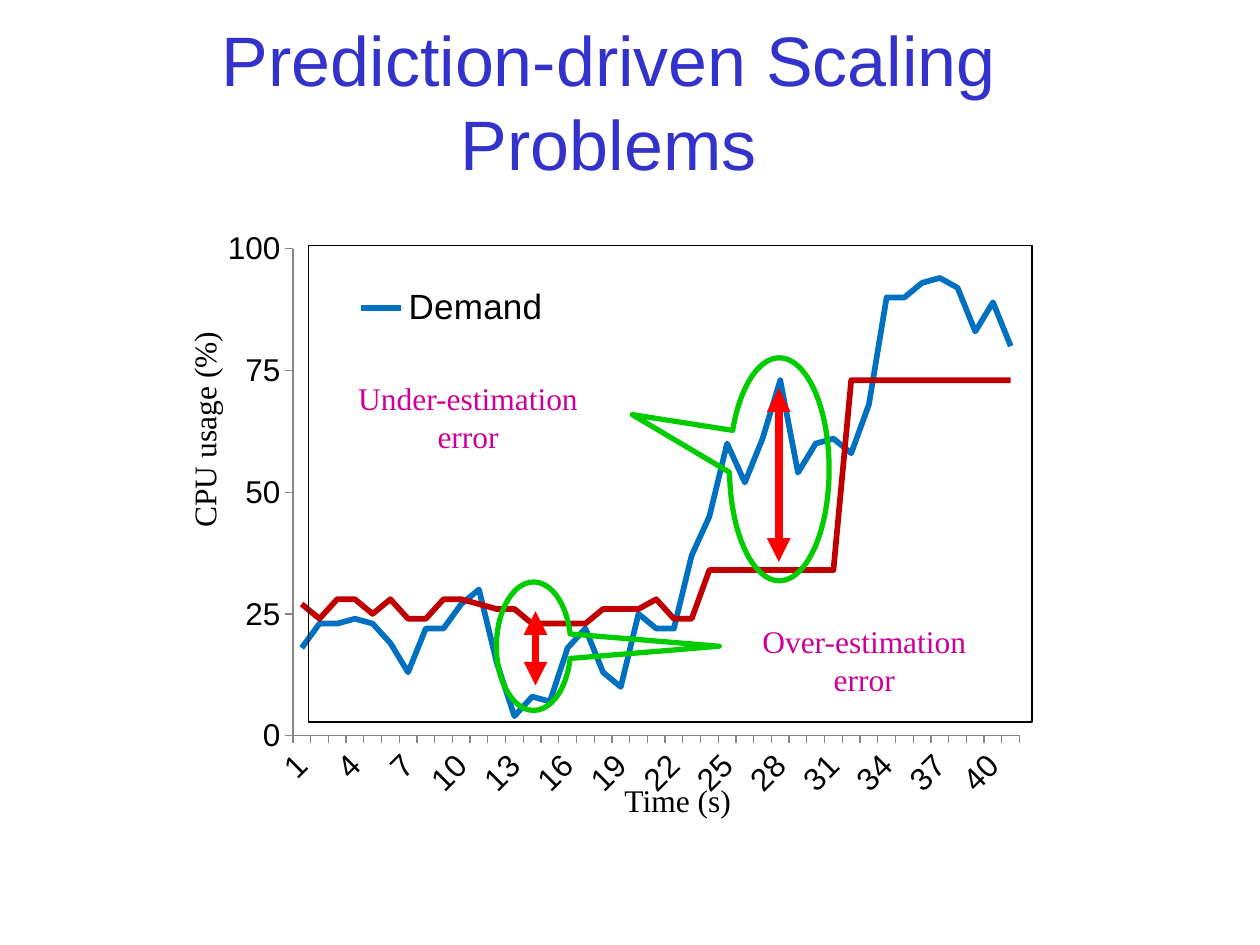
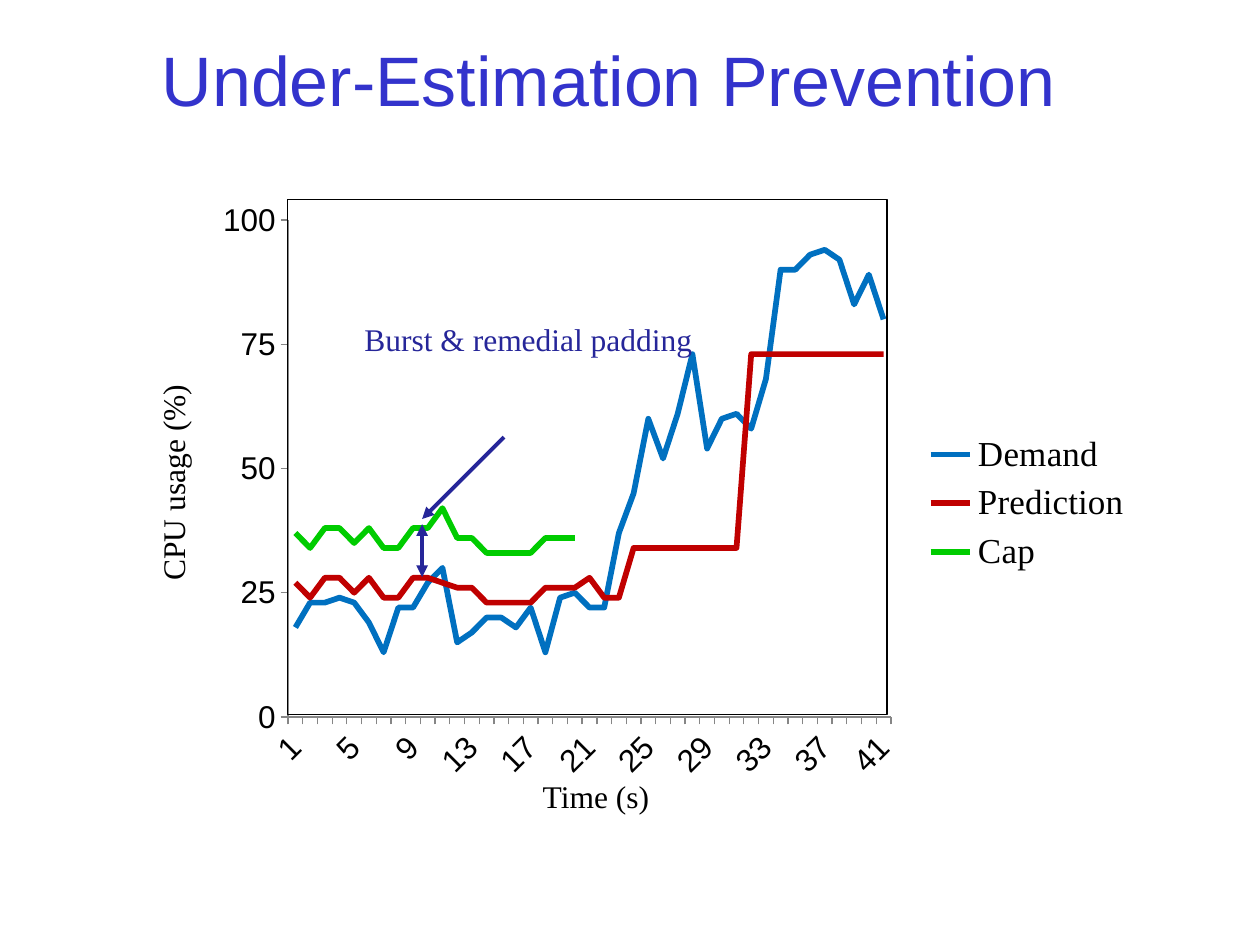
from dataclasses import dataclass

from lxml.etree import SubElement
from pptx import Presentation
from pptx.chart.data import CategoryChartData
from pptx.dml.color import RGBColor as RGB
from pptx.enum.chart import XL_CHART_TYPE as CT, XL_LEGEND_POSITION as LP, XL_TICK_MARK as TM
from pptx.enum.shapes import MSO_CONNECTOR as MC, MSO_SHAPE as MS
from pptx.enum.text import MSO_ANCHOR as MA, PP_ALIGN as PA
from pptx.oxml.ns import qn
from pptx.util import Pt


@dataclass(frozen=True)
class Theme:
    sans: str = "Arial"
    serif: str = "Times New Roman"
    title_size: int = 40
    legend_size: int = 20
    label_size: int = 18
    title: RGB = RGB.from_string("3333CC")
    ink: RGB = RGB.from_string("000000")
    axis: RGB = RGB.from_string("868686")
    demand: RGB = RGB.from_string("0070C0")
    prediction: RGB = RGB.from_string("C00000")
    cap: RGB = RGB.from_string("00CC00")
    error: RGB = RGB.from_string("CC0099")
    gap: RGB = RGB.from_string("FF0000")
    padding: RGB = RGB.from_string("262699")


T = Theme()


def text(s, box, lines, size=T.label_size, font=T.serif, color=T.ink,
         anchor=MA.TOP, vertical=False):
    tf = s.shapes.add_textbox(*map(Pt, box)).text_frame
    tf.word_wrap = True
    tf.vertical_anchor = anchor
    if vertical:
        tf._txBody.bodyPr.set("vert", "vert270")
    for i, line in enumerate(lines):
        p = tf.add_paragraph() if i else tf.paragraphs[0]
        p.alignment = PA.CENTER
        r = p.add_run()
        r.text = line
        r.font.size = Pt(size)
        r.font.name = font
        r.font.color.rgb = color


def place(parent, index, x, y, w, h, inner=False):
    for old in parent.findall(qn("c:layout")):
        parent.remove(old)
    layout = SubElement(parent, qn("c:layout"))
    manual = SubElement(layout, qn("c:manualLayout"))
    if inner:
        SubElement(manual, qn("c:layoutTarget")).set("val", "inner")
    for tag, val in (("xMode", "edge"), ("yMode", "edge"),
                     ("x", x), ("y", y), ("w", w), ("h", h)):
        SubElement(manual, qn("c:" + tag)).set("val", str(val))
    parent.insert(index, layout)


rise = [18, 23, 23, 24, 23, 19, 13, 22, 22, 27, 30, 15]
surge = [22, 22, 37, 45, 60, 52, 61, 73, 54, 60, 61, 58, 68, 90, 90, 93, 94, 92, 83, 89, 80]
prediction = ([27, 24, 28, 28, 25, 28, 24, 24, 28, 28, 27, 26, 26] + [23] * 4
              + [26] * 3 + [28, 24, 24] + [34] * 8 + [73] * 10)
cap = [v + 10 for v in prediction[:20]]
cap[10] = 42
cap += [None] * 21

slides = [
    dict(
        title="Prediction-driven Scaling Problems", title_top=12.2,
        chart=(121.7, 125.3, 470.9, 337.7), plot=(0.097, 0.05, 0.882, 0.824),
        legend=(0.13, 0.08, 0.32, 0.14), overlay=True, hidden=[1],
        legend_font=T.sans, skip=3,
        series=[("Demand", rise + [4, 8, 7, 18, 22, 13, 10, 25] + surge, T.demand),
                ("Prediction", prediction, T.prediction)],
        time=(339.8, 442.8, 95, 39.6), usage=(102.2, 159.8, 43.2, 171.4),
        notes=[((175.7, 213.1, 183.6, 65.5), ["Under-estimation", "error"], T.error),
               ((408.2, 352.1, 171.4, 65.5), ["Over-estimation", "error"], T.error)],
        arrows=[(445, 221.8, 445, 321.1, T.gap, 4.5, True),
                (306, 349.2, 306, 391.7, T.gap, 4.5, True)],
        frame=(176.4, 140.4, 413.3, 272.2),
        callouts=[((416.9, 204.5, 56.9, 127.4), (-1.478, -0.245)),
                  ((283.7, 332.6, 42.5, 73.4), (2.496, 0))]),
    dict(
        title="Under-Estimation Prevention", title_top=0,
        chart=(108, 108.7, 544.3, 354.2), plot=(0.104, 0.048, 0.633, 0.802),
        legend=(0.76, 0.38, 0.24, 0.25), overlay=False, hidden=[],
        legend_font=T.serif, skip=4,
        series=[("Demand", rise + [17, 20, 20, 18, 22, 13, 24, 25] + surge, T.demand),
                ("Prediction", prediction, T.prediction),
                ("Cap", cap, T.cap)],
        time=(292.3, 440.6, 96.5, 36), usage=(84.2, 196.6, 43.9, 158.4),
        notes=[((198.7, 179.3, 206.6, 65.5), ["Burst & remedial padding"], T.padding)],
        arrows=[(288, 249.8, 241.2, 296.6, T.padding, 2.25, False),
                (241.2, 299.5, 241.2, 329.8, T.padding, 2.25, True)],
        frame=(164.2, 113.8, 342.7, 294.5), callouts=[]),
]

prs = Presentation()
prs.slide_width, prs.slide_height = Pt(720), Pt(540)

for d in slides:
    s = prs.slides.add_slide(prs.slide_layouts[6])
    text(s, (41.8, d["title_top"], 612, 90), [d["title"]], size=T.title_size,
         font=T.sans, color=T.title, anchor=MA.MIDDLE)

    data = CategoryChartData()
    data.categories = [str(n) for n in range(1, 42)]
    for name, values, color in d["series"]:
        data.add_series(name, values)
    chart = s.shapes.add_chart(CT.LINE, *map(Pt, d["chart"]), data).chart
    chart.has_title = False
    chart.font.name = T.sans
    chart.font.size = Pt(T.label_size)
    chart.font.color.rgb = T.ink
    chart.plots[0].vary_by_categories = False
    for ser, (name, values, color) in zip(chart.plots[0].series, d["series"]):
        ser.smooth = False
        ser.format.line.color.rgb = color
        ser.format.line.width = Pt(3.25)

    for axis in (chart.category_axis, chart.value_axis):
        axis.has_major_gridlines = False
        axis.major_tick_mark = TM.OUTSIDE
        axis.minor_tick_mark = TM.NONE
        axis.tick_labels.font.size = Pt(T.label_size)
        axis.format.line.color.rgb = T.axis
        axis.format.line.width = Pt(0.75)
    chart.value_axis.minimum_scale = 0
    chart.value_axis.maximum_scale = 100
    chart.value_axis.major_unit = 25
    cat = chart.category_axis._element
    cat.find(qn("c:txPr")).find(qn("a:bodyPr")).set("rot", "-2700000")
    skip = SubElement(cat, qn("c:tickLblSkip"))
    skip.set("val", str(d["skip"]))
    cat.find(qn("c:noMultiLvlLbl")).addprevious(skip)

    chart.has_legend = True
    legend = chart.legend
    legend.position = LP.RIGHT
    legend.include_in_layout = d["overlay"]
    legend.font.size = Pt(T.legend_size)
    legend.font.name = d["legend_font"]
    legend.font.color.rgb = T.ink
    place(legend._element, 1, *d["legend"])
    for idx in d["hidden"]:
        entry = SubElement(legend._element, qn("c:legendEntry"))
        SubElement(entry, qn("c:idx")).set("val", str(idx))
        SubElement(entry, qn("c:delete")).set("val", "1")
        legend._element.insert(1, entry)
    place(chart._chartSpace.chart.plotArea, 0, *d["plot"], inner=True)

    text(s, d["time"], ["Time (s)"])
    text(s, d["usage"], ["CPU usage (%)"], vertical=True)
    for box, lines, color in d["notes"]:
        text(s, box, lines, color=color)

    for x1, y1, x2, y2, color, width, double in d["arrows"]:
        c = s.shapes.add_connector(MC.STRAIGHT, Pt(x1), Pt(y1), Pt(x2), Pt(y2))
        c.line.color.rgb = color
        c.line.width = Pt(width)
        ln = c.line._get_or_add_ln()
        for end in ("a:headEnd", "a:tailEnd") if double else ("a:tailEnd",):
            SubElement(ln, qn(end)).set("type", "triangle")
        SubElement(c._element.spPr, qn("a:effectLst"))

    outlines = [(MS.RECTANGLE, d["frame"], (), T.ink, 0.75)]
    outlines += [(MS.OVAL_CALLOUT, box, tip, T.cap, 3) for box, tip in d["callouts"]]
    for kind, box, tip, color, width in outlines:
        sp = s.shapes.add_shape(kind, *map(Pt, box))
        for i, value in enumerate(tip):
            sp.adjustments[i] = value
        sp.shadow.inherit = False
        sp.fill.background()
        sp.line.color.rgb = color
        sp.line.width = Pt(width)

prs.save("out.pptx")
